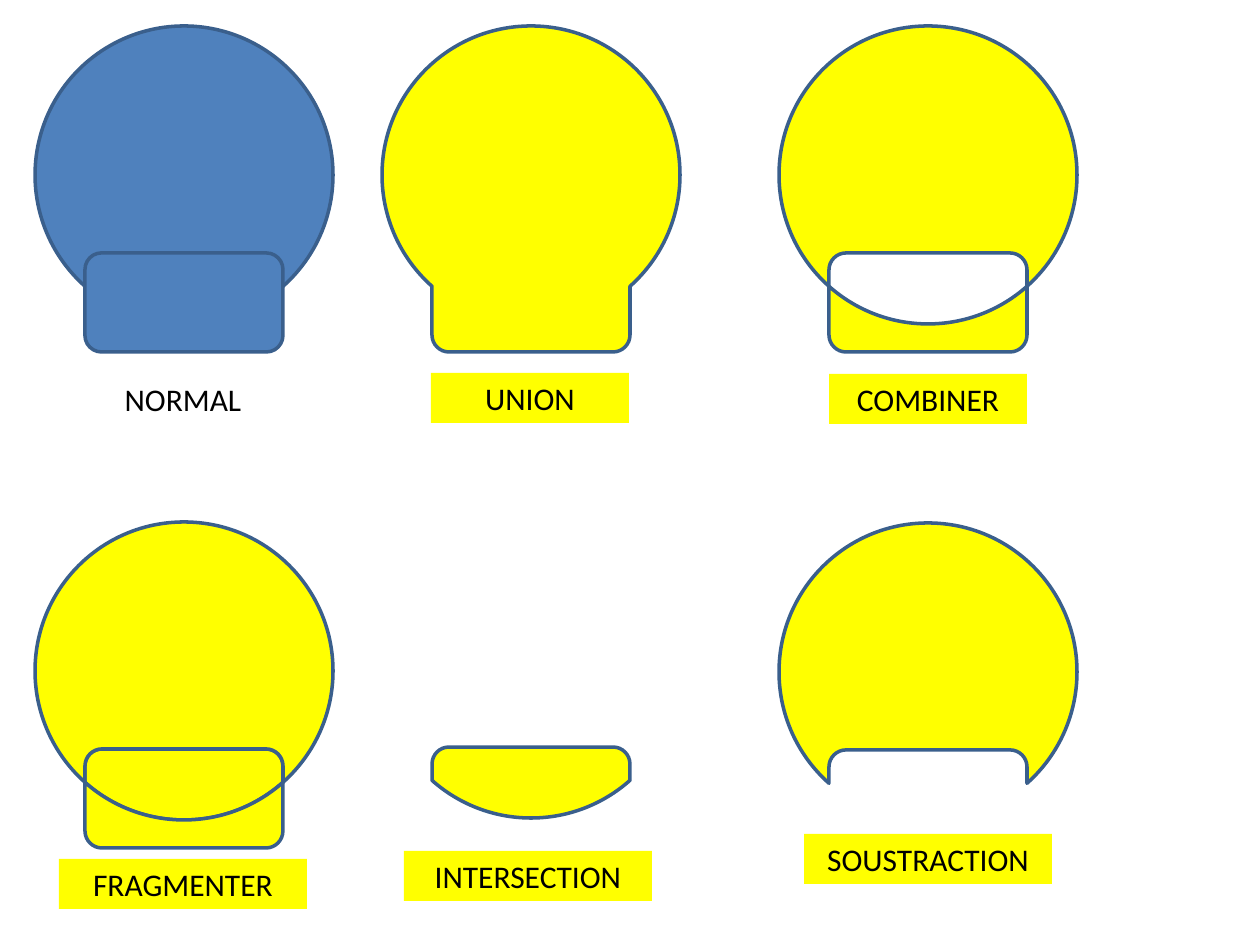
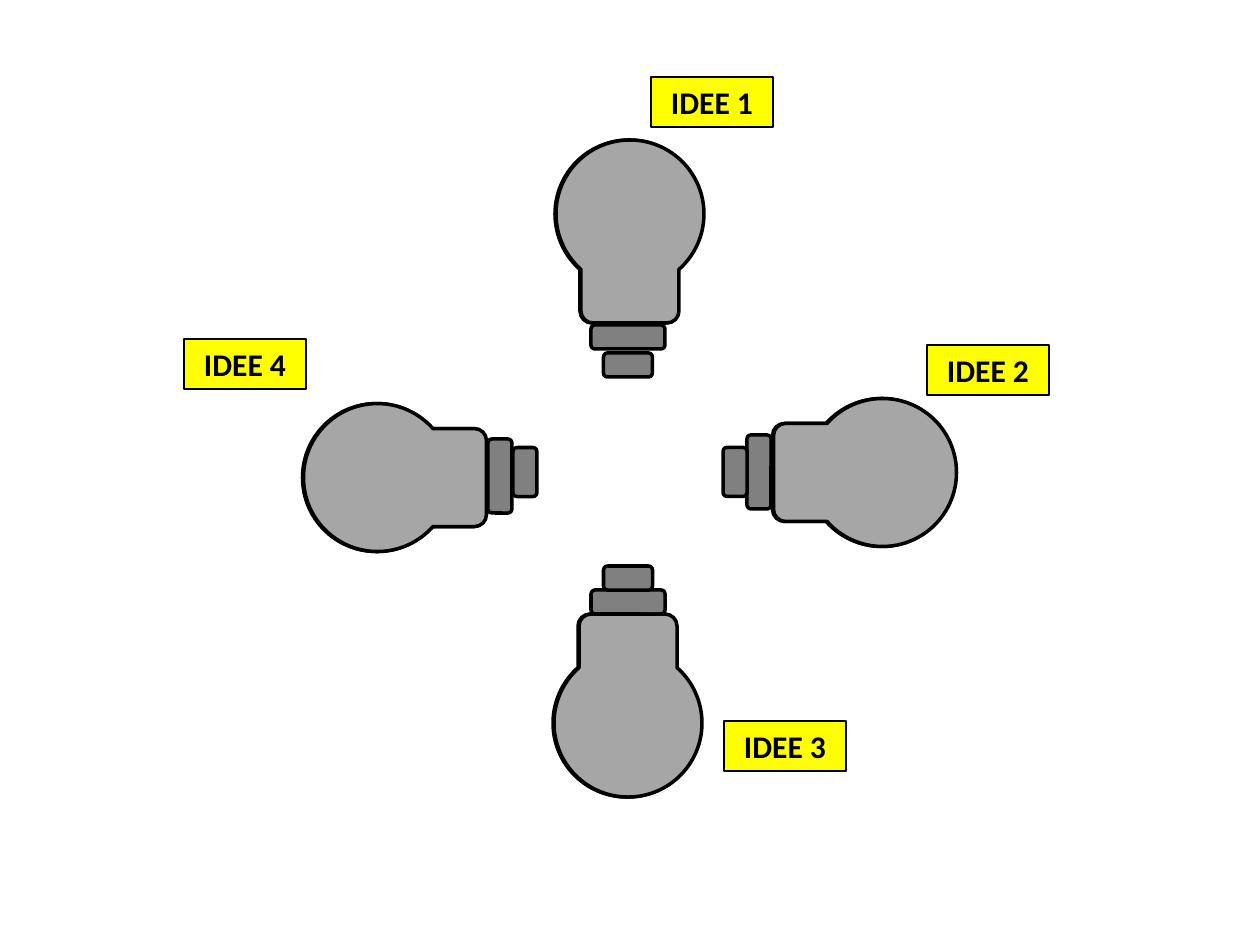
"""Two slides: shape merging modes, then four idea bulbs made with a union."""
from math import acos, cos, degrees, radians, sin, tan

from pptx import Presentation
from pptx.dml.color import RGBColor
from pptx.enum.shapes import MSO_SHAPE
from pptx.enum.text import MSO_AUTO_SIZE, PP_ALIGN
from pptx.oxml.ns import qn
from pptx.util import Emu, Pt

OVAL, ROUND = MSO_SHAPE.OVAL, MSO_SHAPE.ROUNDED_RECTANGLE
CENTER, GROW = PP_ALIGN.CENTER, MSO_AUTO_SIZE.SHAPE_TO_FIT_TEXT

FONT = "Calibri"
BLUE, NAVY, YELLOW = "4F81BD", "3A5F8C", "FFFF00"
BLACK, GREY, LIGHT = "000000", "808080", "A6A6A6"

BALL = dict(r=149, half=99, top=78, low=177, curve=17)
GLASS = dict(r=74, half=49, top=0, low=109, curve=12)
DROP = 17
TALL = 50

# name, ball centre, groups of parts, label left, top and width, label fill
MODES = [
    ("NORMAL", (184, 175), [], (84, 374, 198), None),
    ("UNION", (531, 175), [["union"]], (431, 373, 198), YELLOW),
    ("COMBINER", (928, 175), [["rest", "slice"]], (829, 374, 198), YELLOW),
    ("FRAGMENTER", (184, 671), [["lens"], ["slice"], ["rest"]],
     (59, 859, 248), YELLOW),
    ("INTERSECTION", (531, 669), [["lens"]], (404, 851, 248), YELLOW),
    ("SOUSTRACTION", (928, 672), [["slice"]], (804, 834, 248), YELLOW),
]

# name, turn, glass centre, wide ring centre, narrow ring centre, label place
IDEAS = [
    ("IDEE 1", 0, (630, 231), (628, 337), (628, 365), (651, 77, 122)),
    ("IDEE 2", 90, (865, 472), (759, 472), (735, 472), (927, 345, 122)),
    ("IDEE 3", 180, (628, 705), (628, 602), (628, 578), (724, 721, 122)),
    ("IDEE 4", 270, (395, 477), (500, 476), (525, 472), (184, 339, 122)),
]
RINGS = [(74, 24), (49, 24)]


def px(val):
    return Emu(round(val * 914400 / 126))


def tint(code):
    return RGBColor.from_string(code)


def paint(shape, fill, line, width=2):
    shape.shadow.inherit = False
    shape.fill.solid()
    shape.fill.fore_color.rgb = tint(fill)
    shape.line.color.rgb = tint(line)
    shape.line.width = Pt(width)


def arc(x, y, r, start, end):
    stops = [start, *(t for t in range(0, 450, 90) if start < t < end), end]
    points = [(x + r * cos(radians(start)), y + r * sin(radians(start)))]
    for a, b in zip(stops, stops[1:]):
        a, b = radians(a), radians(b)
        pull = r * 4 / 3 * tan((b - a) / 4)
        ax, ay = points[-1]
        bx, by = x + r * cos(b), y + r * sin(b)
        points += [(ax - pull * sin(a), ay + pull * cos(a)),
                   (bx + pull * sin(b), by - pull * cos(b)), (bx, by)]
    return points


def flip(arcs):
    return [points[::-1] for points in arcs[::-1]]


def parts(r, half, top, low, curve):
    """Return the outlines, as lists of arcs, of a ball cut by a box."""
    cut = degrees(acos(half / r))
    side = half - curve
    dome = [arc(0, 0, r, 180 - cut, 360 + cut)]
    bowl = [arc(0, 0, r, cut, 180 - cut)]
    cap = [arc(-side, top + curve, curve, 180, 270),
           arc(side, top + curve, curve, 270, 360)]
    base = [arc(side, low - curve, curve, 0, 90),
            arc(-side, low - curve, curve, 90, 180)]
    return {"union": dome + base, "slice": dome + flip(cap),
            "lens": cap + bowl, "rest": flip(bowl) + base}


def bend(shape, paths):
    """Turn each three line steps inside an arc into one curve."""
    steps = iter(list(shape.element.iter(qn("a:lnTo"))))
    for path in paths:
        for i, points in enumerate(path):
            if i:
                next(steps)
            for _ in range(len(points) // 3):
                first = next(steps)
                first.tag = qn("a:cubicBezTo")
                for step in (next(steps), next(steps)):
                    first.append(step[0])
                    step.getparent().remove(step)


def draw(slide, paths, x, y, fill, line):
    pen = None
    for path in paths:
        first, *others = [(px(x + a), px(y + b))
                          for points in path for a, b in points]
        if pen is None:
            pen = slide.shapes.build_freeform(*first)
        else:
            pen.move_to(*first)
        pen.add_line_segments(others, close=True)
    shape = pen.convert_to_shape()
    bend(shape, paths)
    paint(shape, fill, line)
    return shape


def preset(slide, kind, mid, size, fill, line):
    (x, y), (w, h) = mid, size
    shape = slide.shapes.add_shape(
        kind, px(x - w / 2), px(y - h / 2), px(w), px(h))
    paint(shape, fill, line)
    return shape


def label(slide, text, place, fill, line=None, bold=False):
    x, y, w = place
    box = slide.shapes.add_textbox(px(x), px(y), px(w), px(TALL))
    if fill:
        box.fill.solid()
        box.fill.fore_color.rgb = tint(fill)
    if line:
        box.line.color.rgb = tint(line)
        box.line.width = Pt(0.75)
    frame = box.text_frame
    frame.word_wrap = True
    frame.auto_size = GROW
    frame.text = text
    para = frame.paragraphs[0]
    para.alignment = CENTER
    font = para.runs[0].font
    font.name, font.size, font.bold = FONT, Pt(18), bold
    font.color.rgb = tint(BLACK)


def show_modes(slide):
    shapes = parts(**BALL)
    r, half, top, low = (BALL[k] for k in ("r", "half", "top", "low"))
    for name, (x, y), groups, place, fill in MODES:
        if not groups:
            preset(slide, OVAL, (x, y), (2 * r, 2 * r), BLUE, NAVY)
            preset(slide, ROUND, (x, y + (top + low) / 2),
                   (2 * half, low - top), BLUE, NAVY)
        for group in groups:
            draw(slide, [shapes[k] for k in group], x, y, YELLOW, NAVY)
        label(slide, name, place, fill)


def show_ideas(slide):
    glass = [parts(**GLASS)["union"]]
    for name, turn, (x, y), wide, slim, place in IDEAS:
        back = draw(slide, glass, x - 1, y - DROP, YELLOW, BLACK)
        rings = [preset(slide, ROUND, mid, size, GREY, BLACK)
                 for mid, size in zip((wide, slim), RINGS)]
        front = draw(slide, glass, x, y - DROP, LIGHT, BLACK)
        for shape in (back, *rings, front):
            shape.rotation = turn
        label(slide, name, place, YELLOW, BLACK, True)


def main():
    deck = Presentation()
    deck.slide_width, deck.slide_height = px(1260), px(945)
    for show in (show_modes, show_ideas):
        show(deck.slides.add_slide(deck.slide_layouts[6]))
    deck.save("out.pptx")


if __name__ == "__main__":
    main()
